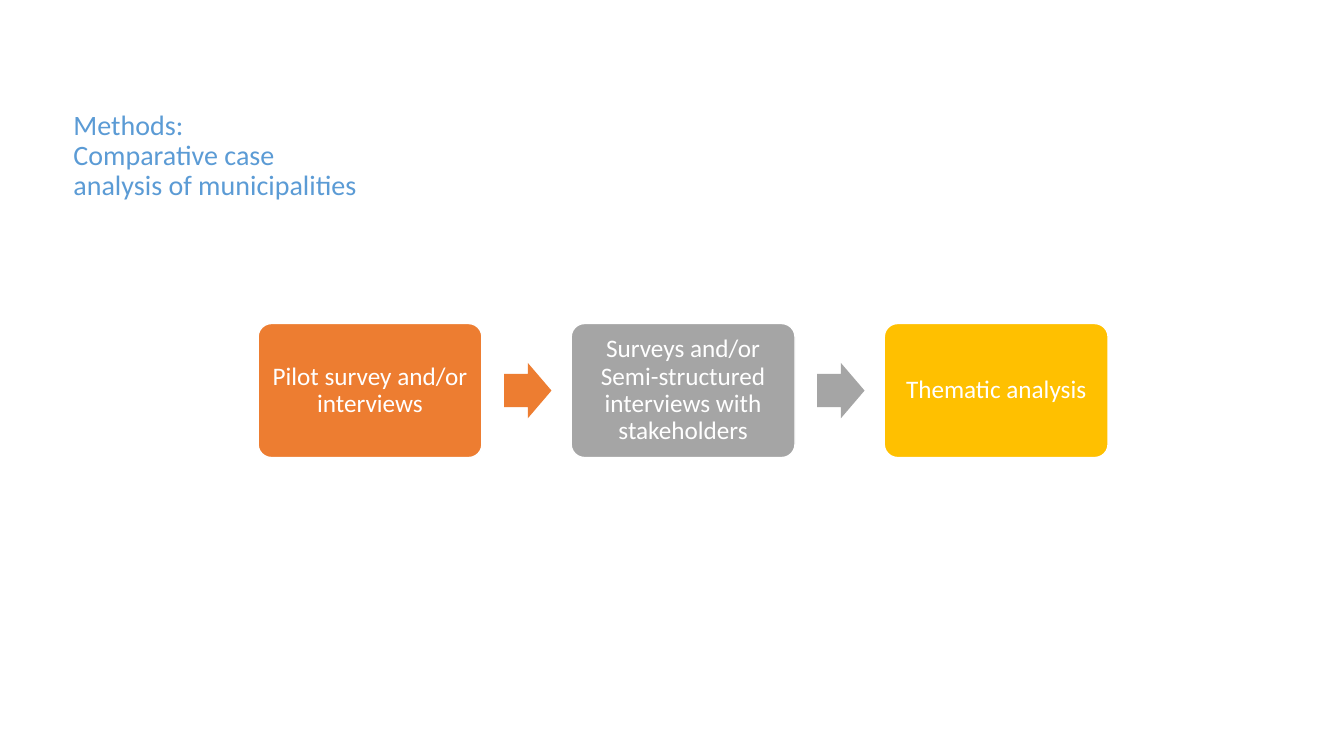
from pptx import Presentation
from pptx.dml.color import RGBColor
from pptx.enum.shapes import MSO_SHAPE
from pptx.enum.text import MSO_ANCHOR, PP_ALIGN
from pptx.util import Inches, Pt

STEPS = [
    ("Pilot survey and/or interviews", "ED7D31"),
    ("Surveys and/or Semi-structured interviews with stakeholders", "A5A5A5"),
    ("Thematic analysis", "FFC000"),
]
FLOW_LEFT, FLOW_MIDDLE, STEP_PITCH = 2.56, 3.875, 3.105
STEP_WIDTH, STEP_HEIGHT = 2.22, 1.33
ARROW_OFFSET, ARROW_WIDTH, ARROW_HEIGHT = 2.44, 0.47, 0.55
STEP_MARGINS = dict.fromkeys(
    ("margin_left", "margin_right", "margin_top", "margin_bottom"), Inches(0.07))


def color(hex_code):
    """Turn a hex string into a colour."""
    return RGBColor.from_string(hex_code)


def apply(target, formats):
    """Set each format value on the target."""
    for attribute, value in formats.items():
        setattr(target, attribute, value)


def write(holder, wording, size, hex_code, align, margins):
    """Write one middle-anchored paragraph into a shape."""
    frame = holder.text_frame
    apply(frame, {"word_wrap": True, "vertical_anchor": MSO_ANCHOR.MIDDLE, **margins})
    paragraph = frame.paragraphs[0]
    paragraph.text = wording
    apply(paragraph, {"alignment": align, "line_spacing": 0.9})
    for run in paragraph.runs:
        apply(run.font, {"name": "Calibri", "size": Pt(size)})
        run.font.color.rgb = color(hex_code)


def add_block(slide, preset, left, width, height, fill, adjustments):
    """Add a filled preset shape centred on the flow's middle line."""
    block = slide.shapes.add_shape(
        preset, Inches(left), Inches(FLOW_MIDDLE - height / 2), Inches(width), Inches(height))
    block.shadow.inherit = False
    for index, value in enumerate(adjustments):
        block.adjustments[index] = value
    block.fill.solid()
    block.fill.fore_color.rgb = color(fill)
    block.line.fill.background()
    return block


def add_step(slide, left, wording, fill):
    """Add a rounded, white-edged step with its label."""
    step = add_block(slide, MSO_SHAPE.ROUNDED_RECTANGLE, left,
                     STEP_WIDTH, STEP_HEIGHT, fill, [0.1])
    step.line.color.rgb = color("FFFFFF")
    step.line.width = Pt(1)
    write(step, wording, 18, "FFFFFF", PP_ALIGN.CENTER, STEP_MARGINS)


def add_heading(slide):
    """Add the slide's heading."""
    heading = slide.shapes.add_textbox(
        Inches(0.63), Inches(0.92), Inches(3.13), Inches(1.26))
    write(heading, "Methods:\vComparative case analysis of municipalities",
          20, "5B9BD5", PP_ALIGN.LEFT, {})


def main():
    """Build the methods slide."""
    deck = Presentation()
    apply(deck, {"slide_width": Inches(13.33), "slide_height": Inches(7.5)})
    slide = deck.slides.add_slide(deck.slide_layouts[6])
    add_heading(slide)
    for index, (wording, fill) in enumerate(STEPS):
        left = FLOW_LEFT + index * STEP_PITCH
        add_step(slide, left, wording, fill)
        if index < len(STEPS) - 1:
            add_block(slide, MSO_SHAPE.RIGHT_ARROW, left + ARROW_OFFSET,
                      ARROW_WIDTH, ARROW_HEIGHT, fill, [0.6, 0.5])
    deck.save("out.pptx")


if __name__ == "__main__":
    main()
